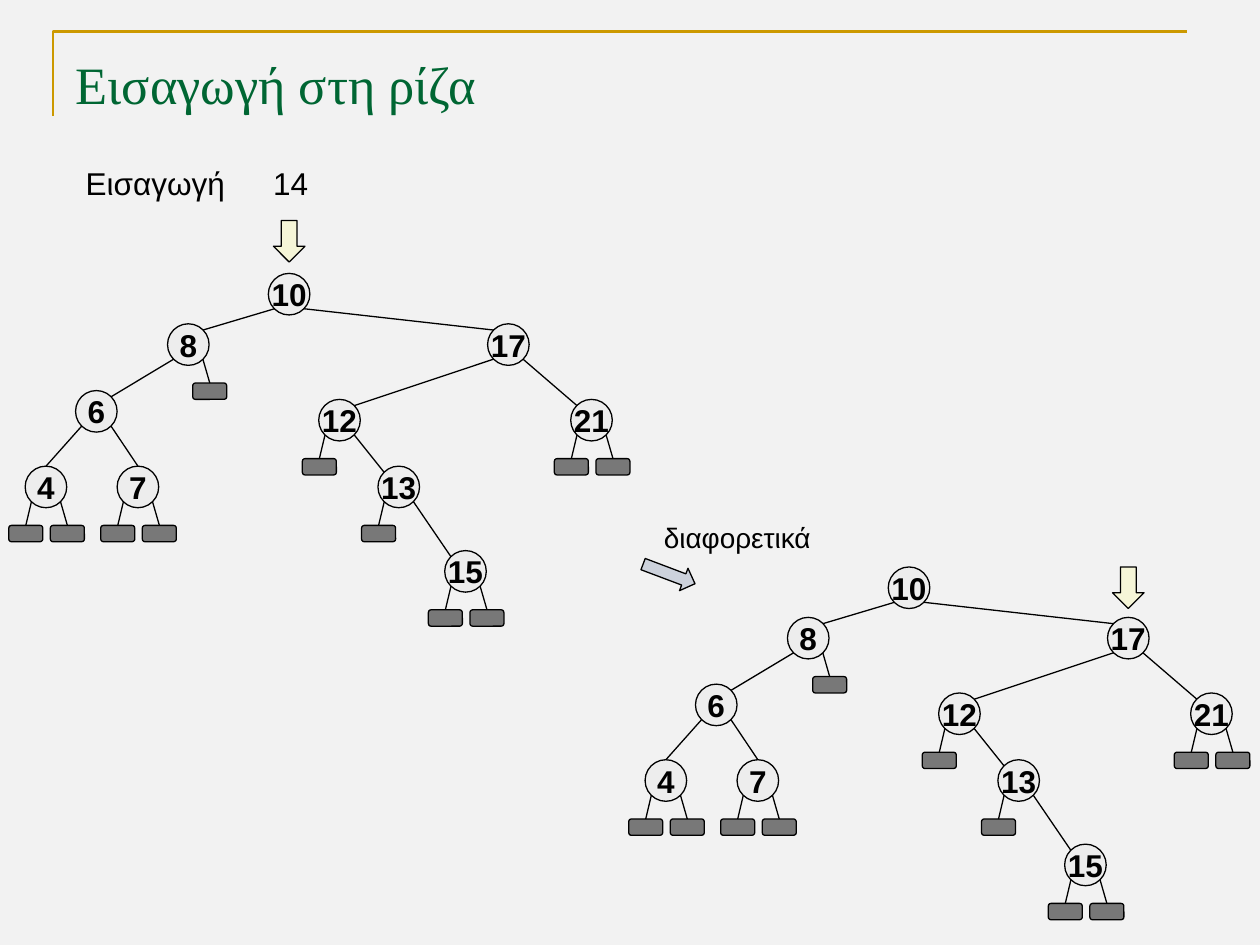
from lxml import etree
from pptx import Presentation
from pptx.dml.color import RGBColor
from pptx.enum import shapes, text
from pptx.oxml.ns import qn
from pptx.util import Inches, Pt

COLORS = {"bg": "F2F2F2", "frame": "CC9900", "title": "006633", "ink": "000000",
          "node": "EAEAEA", "here": "FFFF99", "next": "002060"}
NODE, LEAF_W, LEAF_H = 0.33, 0.27, 0.13
NEAR, FAR = 0.05, 0.28  # where links meet a node, from its left or top

# key: left, top, parent, side of parent, sides with an empty leaf
TREE = {
    "10": (2.13, 2.17, None, None, ""),
    "8": (1.33, 2.57, "10", "L", "R"),
    "6": (0.6, 3.1, "8", "L", ""),
    "4": (0.2, 3.7, "6", "L", "LR"),
    "7": (0.93, 3.7, "6", "R", "LR"),
    "17": (3.87, 2.57, "10", "R", ""),
    "12": (2.53, 3.17, "17", "L", "L"),
    "13": (3, 3.7, "12", "R", "L"),
    "15": (3.53, 4.37, "13", "R", "LR"),
    "21": (4.53, 3.17, "17", "R", "LR"),
}


def add_filled(parent, kind, box, color, opacity):
    sp = parent.add_shape(kind, *map(Inches, box))
    sp.shadow.inherit = False
    sp.fill.solid()
    sp.fill.fore_color.rgb = RGBColor.from_string(COLORS[color])
    clr = sp.fill._xPr.find(qn("a:solidFill"))[0]
    etree.SubElement(clr, qn("a:alpha"), val=str(opacity * 1000))
    sp.line.color.rgb = RGBColor.from_string(COLORS["ink"])
    sp.line.width = Pt(0.75)
    return sp


def write(sp, words, size, frame, font="Arial", color="ink", bold=False, align="LEFT"):
    tf = sp.text_frame
    for name, value in frame.items():
        setattr(tf, name, value)
    p = tf.paragraphs[0]
    p.alignment = getattr(text.PP_ALIGN, align)
    r = p.add_run()
    r.text = words
    for name, value in {"name": font, "size": Pt(size), "bold": bold}.items():
        setattr(r.font, name, value)
    r.font.color.rgb = RGBColor.from_string(COLORS[color])
    return p


prs = Presentation()
prs.slide_width, prs.slide_height = Inches(10), Inches(7.5)
s = prs.slides.add_slide(prs.slide_layouts[1])
s.background.fill.solid()
s.background.fill.fore_color.rgb = RGBColor.from_string(COLORS["bg"])

# Corner frame
fb = s.shapes.build_freeform(Inches(0.42), Inches(0.92))
fb.add_line_segments([(Inches(0.42), Inches(0.25)), (Inches(9.42), Inches(0.25))], close=False)
frame = fb.convert_to_shape()
frame.shadow.inherit = False
frame.fill.background()
frame.line.color.rgb = RGBColor.from_string(COLORS["frame"])
frame.line.width = Pt(1.5)

# Title and instruction
title, body = s.placeholders
for sp, box in ((title, (0.5, 0.3, 9, 0.53)), (body, (0.58, 1.25, 1.42, 0.5))):
    sp.left, sp.top, sp.width, sp.height = map(Inches, box)
top = {"vertical_anchor": text.MSO_ANCHOR.TOP, "word_wrap": True,
       "auto_size": text.MSO_AUTO_SIZE.NONE}
write(title, "Εισαγωγή στη ρίζα", 30, {**top, "margin_top": Inches(0.11)},
      "Times New Roman", "title")
p = write(body, "Εισαγωγή", 18, top)
p.space_before = Pt(3.6)
pPr = p._p.get_or_add_pPr()
pPr.set("marL", str(Inches(0.38)))
pPr.set("indent", str(-Inches(0.38)))
etree.SubElement(pPr, qn("a:buNone"))

# Free labels
for words, size, box in (("14", 18, (2.07, 1.25, 0.48, 0.4)),
                         ("διαφορετικά", 16, (5.17, 4.08, 1.38, 0.37))):
    sp = s.shapes.add_textbox(*map(Inches, box))
    write(sp, words, size, {"word_wrap": False,
                            "auto_size": text.MSO_AUTO_SIZE.SHAPE_TO_FIT_TEXT})

# The same tree before and after the step
centred = {"vertical_anchor": text.MSO_ANCHOR.MIDDLE, "word_wrap": False}
for dx, dy in ((0, 0), (4.92, 2.33)):
    group = s.shapes.add_group_shape().shapes
    nodes, links = {}, []
    for key, (x, y, parent, side, leaves) in TREE.items():
        x, y = x + dx, y + dy
        node = add_filled(group, shapes.MSO_SHAPE.OVAL, (x, y, NODE, NODE), "node", 60)
        write(node, key, 18, centred, bold=True, align="CENTER")
        nodes[key] = (x, y)
        if parent:
            end = (x + (FAR if side == "L" else NEAR), y + NEAR)
            links.append((parent, side, end, node if key in ("4", "7") else None))
        for leaf_side in leaves:
            left = x + (-0.13 if leaf_side == "L" else 0.2)
            leaf = add_filled(group, shapes.MSO_SHAPE.ROUNDED_RECTANGLE,
                              (left, y + 0.47, LEAF_W, LEAF_H), "ink", 50)
            links.append((key, leaf_side, (left, y + 0.47), leaf))
    for key, side, end, target in links:
        x, y = nodes[key]
        start = (x + (NEAR if side == "L" else FAR), y + FAR)
        link = group.add_connector(shapes.MSO_CONNECTOR.STRAIGHT, *map(Inches, start + end))
        if target is not None:
            link.end_connect(target, 0)
        link.line.color.rgb = RGBColor.from_string(COLORS["ink"])
        link.line.width = Pt(0.75)
        etree.SubElement(link._element.spPr, qn("a:effectLst"))

# Arrows: step to the next tree, then the current node in each tree
step = add_filled(s.shapes, shapes.MSO_SHAPE.RIGHT_ARROW, (5.09, 4.46, 0.44, 0.19), "next", 15)
step.rotation = 20.7
for x, y in ((2.17, 1.75), (8.83, 4.5)):
    add_filled(s.shapes, shapes.MSO_SHAPE.DOWN_ARROW, (x, y, 0.25, 0.33), "here", 30)

prs.save("out.pptx")
